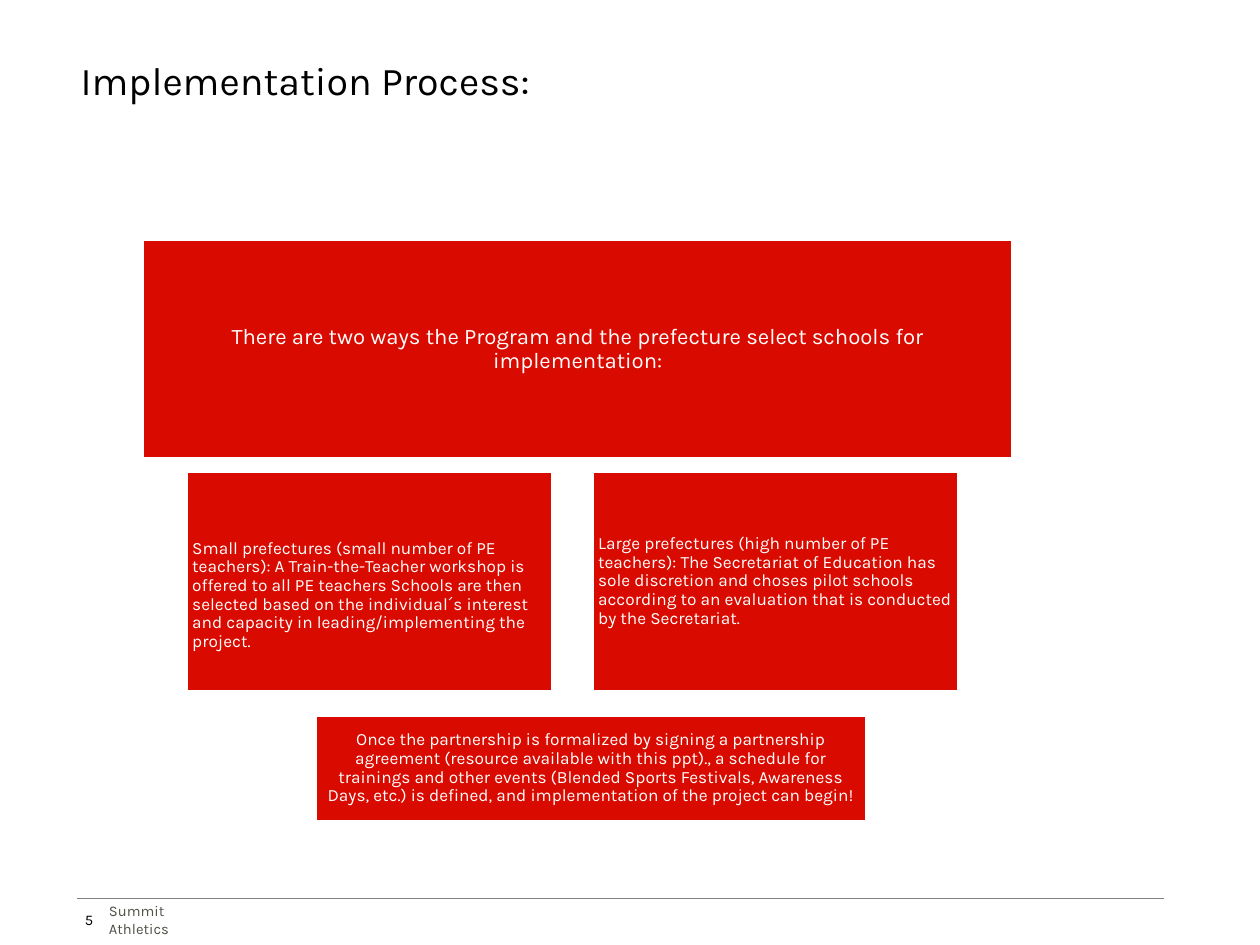
from pptx import Presentation
from pptx import util as u
from pptx.dml.color import RGBColor
from pptx.enum import shapes, text
from pptx.oxml.ns import qn
from lxml import etree

RED = RGBColor(0xD9, 0x0B, 0x00)
WHITE = RGBColor(0xFF, 0xFF, 0xFF)
BLACK = RGBColor(0x00, 0x00, 0x00)
GREY = RGBColor(0x80, 0x80, 0x80)
OLIVE = RGBColor(0x4F, 0x51, 0x46)
LEFT, CENTER = text.PP_ALIGN.LEFT, text.PP_ALIGN.CENTER
TOP, MIDDLE = text.MSO_ANCHOR.TOP, text.MSO_ANCHOR.MIDDLE


def write(box, words, size, color, align=LEFT, anchor=MIDDLE, inset=0.06):
    """Fill a shape with one formatted paragraph."""
    frame = box.text_frame
    frame.word_wrap = True
    frame.auto_size = text.MSO_AUTO_SIZE.NONE
    frame.vertical_anchor = anchor
    frame.margin_left = frame.margin_right = u.Inches(inset)
    frame.margin_top = frame.margin_bottom = u.Inches(inset)
    para = frame.paragraphs[0]
    para.alignment = align
    span = para.add_run()
    span.text = words
    span.font.name = "Karla"
    span.font.size = u.Pt(size)
    span.font.color.rgb = color
    return para


deck = Presentation()
deck.slide_width, deck.slide_height = u.Inches(14.22), u.Inches(10.67)
page = deck.slides.add_slide(deck.slide_layouts[5])

# Title
title = page.shapes.title
title.left, title.top = u.Inches(0.85), u.Inches(0.57)
title.width, title.height = u.Inches(11.35), u.Inches(1.31)
write(title, "Implementation Process:", 32, BLACK, anchor=TOP)

# Process boxes: left, top, width, height, text size, alignment, extra top inset, words
steps = [
    (1.61, 2.71, 9.82, 2.47, 18, CENTER, 0,
     "There are two ways the Program and the prefecture select schools for "
     "implementation:"),
    (2.11, 5.33, 4.12, 2.47, 14, LEFT, 0.31,
     "Small prefectures (small number of PE teachers): A Train-the-Teacher "
     "workshop is offered to all PE teachers Schools are then selected based on "
     "the individual´s interest and capacity in leading/implementing the project."),
    (6.69, 5.33, 4.12, 2.47, 14, LEFT, 0,
     "Large prefectures (high number of PE teachers): The Secretariat of "
     "Education has sole discretion and choses pilot schools according to an "
     "evaluation that is conducted by the Secretariat."),
    (3.56, 8.08, 6.22, 1.19, 14, CENTER, 0,
     "Once the partnership is formalized by signing a partnership agreement "
     "(resource available with this ppt)., a schedule for trainings and other "
     "events (Blended Sports Festivals, Awareness Days, etc.) is defined, and "
     "implementation of the project can begin!"),
]
for left, top, width, height, size, align, drop, words in steps:
    box = page.shapes.add_shape(
        shapes.MSO_SHAPE.RECTANGLE,
        u.Inches(left), u.Inches(top), u.Inches(width), u.Inches(height))
    box.shadow.inherit = False
    box.fill.solid()
    box.fill.fore_color.rgb = RED
    box.line.color.rgb = WHITE
    box.line.width = u.Pt(2)
    para = write(box, words, size, WHITE, align)
    para.line_spacing = 0.9
    box.text_frame.margin_top += u.Inches(drop)

# Footer rule
rule = page.shapes.add_connector(
    shapes.MSO_CONNECTOR.STRAIGHT,
    u.Inches(0.87), u.Inches(10.14), u.Inches(13.14), u.Inches(10.14))
rule.line.color.rgb = GREY
rule.line.width = u.Pt(0.5)
etree.SubElement(rule._element.spPr, qn("a:effectLst"))

# Footer name and page number
footer = page.shapes.add_textbox(
    u.Inches(1.23), u.Inches(10.17), u.Inches(0.85), u.Inches(0.42))
write(footer, "Summit Athletics", 12, OLIVE, inset=0)
number = page.shapes.add_textbox(
    u.Inches(0.86), u.Inches(10.24), u.Inches(0.31), u.Inches(0.29))
write(number, "5", 12, BLACK, inset=0.1)

deck.save("out.pptx")
